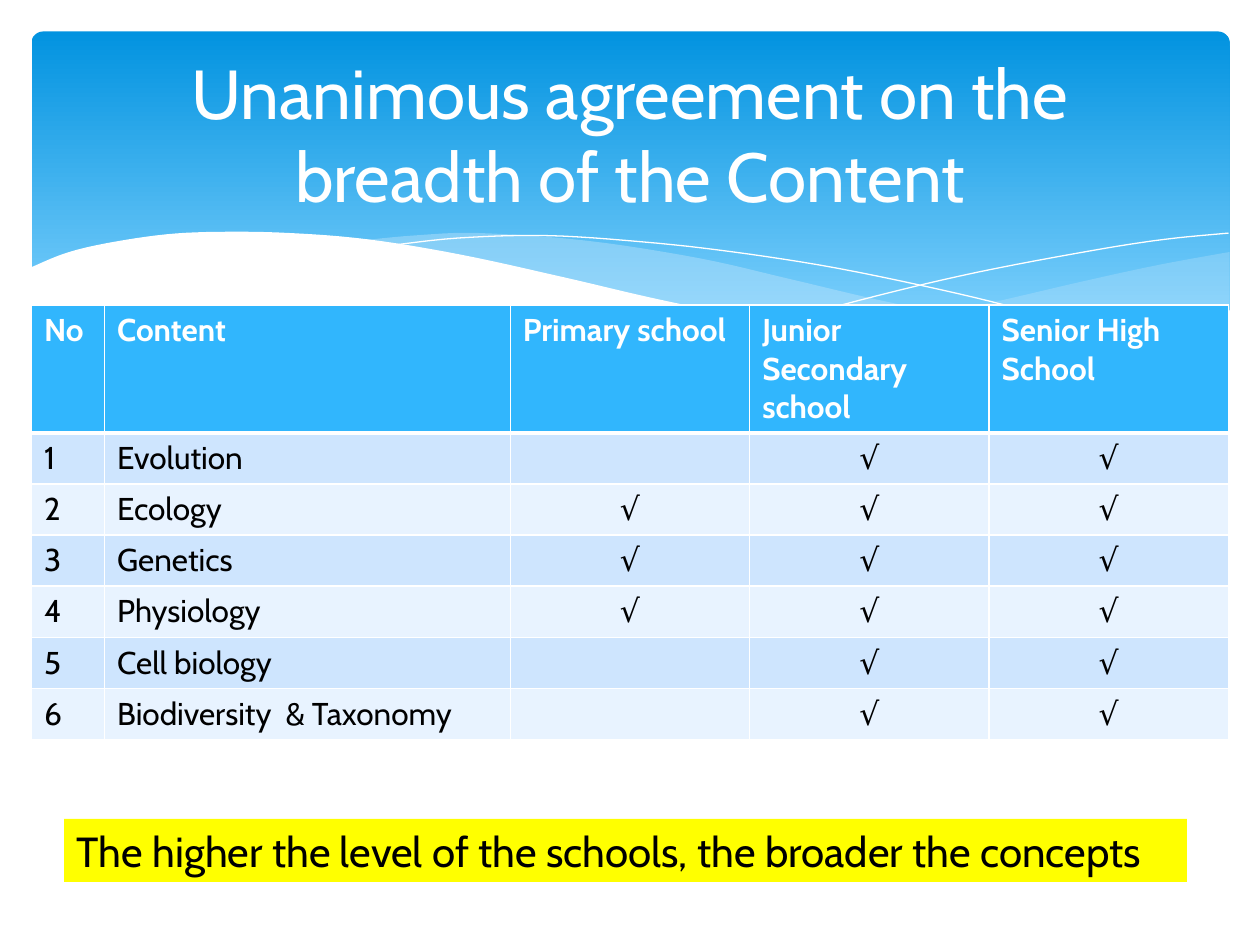
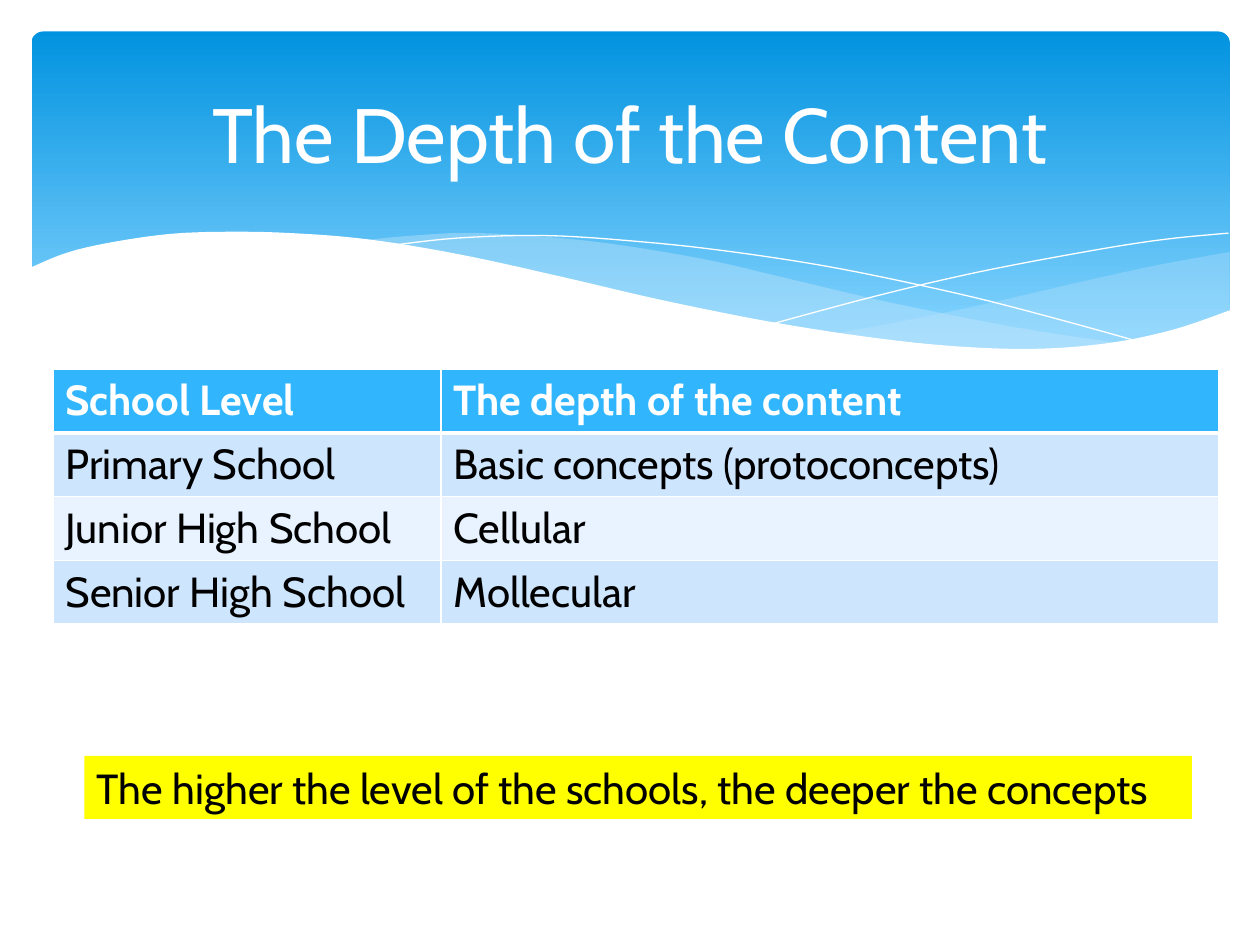
"""Build two slides on the breadth and depth of school biology content."""
from lxml import etree
from pptx import Presentation
from pptx import util as u
from pptx.dml.color import RGBColor
from pptx.enum import shapes, text
from pptx.oxml.ns import qn

PX = 9144
FONT = "Cabin"
WHITE, BLACK, YELLOW = "FFFFFF", "000000", "FFFF00"
BAND_TOP, BAND_BOTTOM, MIST = "0293E0", "83D3FE", "C6E7FC"
HEADER_FILL, ROW_FILLS = "31B6FD", ("CEE5FE", "E8F3FF")

BAND_BOX = (25, 25, 951, 270)
TITLE_BOX = (50, 37, 900, 137)

RIGHT_SWELL = [
    [(951, 175), (896, 185), (836, 198), (754, 217), (681, 232), (636, 240)],
    [(636, 240), (694, 246), (756, 252), (819, 252), (872, 245), (924, 232), (951, 222)],
]
MIDDLE_SWELL = [
    [(868, 248), (782, 235), (681, 215), (604, 197), (530, 180), (440, 166),
     (355, 160), (303, 162), (261, 166)],
    [(261, 166), (337, 178), (424, 197), (541, 223), (625, 239), (697, 249),
     (771, 253), (823, 252), (868, 248)],
]
FALLING_LINE = [
    [(284, 170), (338, 164), (408, 162), (485, 167), (557, 175), (640, 188),
     (735, 208), (806, 226), (882, 247)],
]
RISING_LINE = [[(588, 232), (670, 210), (751, 191), (841, 174), (899, 165), (950, 160)]]
WHITE_WAVE = [
    [(952, 221), (905, 237), (850, 248), (784, 252), (701, 247), (601, 233),
     (504, 214), (422, 195), (340, 177), (267, 165), (205, 160), (152, 159),
     (107, 161), (60, 168), (27, 176), (-2, 188)],
    [(-2, 304), (952, 304)],
]

CHECK = "√"
BREADTH_ROWS = [
    ["No", "Content", "Primary school", "Junior Secondary school", "Senior High School"],
    ["1", "Evolution", "", CHECK, CHECK],
    ["2", "Ecology", CHECK, CHECK, CHECK],
    ["3", "Genetics", CHECK, CHECK, CHECK],
    ["4", "Physiology", CHECK, CHECK, CHECK],
    ["5", "Cell biology", "", CHECK, CHECK],
    ["6", "Biodiversity  & Taxonomy", "", CHECK, CHECK],
]
DEPTH_ROWS = [
    ["School Level", "The depth of the content"],
    ["Primary School", "Basic concepts (protoconcepts)"],
    ["Junior High School", "Cellular"],
    ["Senior High School", "Mollecular"],
]


def color(hex_code):
    """Turn a hex string into a colour."""
    return RGBColor.from_string(hex_code)


def emu(box):
    """Turn lengths in px into EMU."""
    return [u.Emu(length * PX) for length in box]


def format_text(paragraph, size, hex_code, bold=False, align=text.PP_ALIGN.LEFT):
    """Set the alignment of a paragraph and the font of its runs."""
    paragraph.alignment = align
    for run in paragraph.runs:
        run.font.name = FONT
        run.font.size = u.Pt(size)
        run.font.bold = bold
        run.font.color.rgb = color(hex_code)


def smooth_curve(anchors, steps=6):
    """Return points of a Catmull-Rom curve through the anchors."""
    padded = [anchors[0], *anchors, anchors[-1]]
    points = [anchors[0]]
    for a, b, c, d in zip(padded, padded[1:], padded[2:], padded[3:]):
        for step in range(1, steps + 1):
            t = step / steps
            points.append(tuple(
                (2 * q + (r - p) * t + (2 * p - 5 * q + 4 * r - s) * t ** 2
                 + (3 * q - p - 3 * r + s) * t ** 3) / 2
                for p, q, r, s in zip(a, b, c, d)))
    return points


def add_wave(slide, box, edges, fill=None, opacity=100):
    """Draw a filled wave, or a white hairline when no fill is given."""
    points = [(x * PX, y * PX) for edge in edges for x, y in smooth_curve(edge)]
    builder = slide.shapes.build_freeform(*points[0])
    builder.add_line_segments(points[1:], close=fill is not None)
    wave = builder.convert_to_shape(*emu(box[:2]))
    wave.shadow.inherit = False
    if fill is None:
        wave.fill.background()
        wave.line.color.rgb = color(WHITE)
        wave.line.width = u.Pt(0)
        return
    wave.line.fill.background()
    wave.fill.solid()
    wave.fill.fore_color.rgb = color(fill)
    if opacity < 100:
        tint = wave.element.spPr.find(qn("a:solidFill"))[0]
        etree.SubElement(tint, qn("a:alpha"), val=str(opacity * 1000))


def add_band(slide, box):
    """Draw the blue band with its waves."""
    band = slide.shapes.add_shape(shapes.MSO_SHAPE.ROUNDED_RECTANGLE, *emu(box))
    band.adjustments[0] = 0.034
    band.shadow.inherit = False
    band.line.fill.background()
    band.fill.gradient()
    band.fill.gradient_angle = 270
    stops = zip(band.fill.gradient_stops, (0, 0.9), (BAND_TOP, BAND_BOTTOM))
    for stop, position, hex_code in stops:
        stop.position = position
        stop.color.rgb = color(hex_code)
    add_wave(slide, box, RIGHT_SWELL, MIST, 29)
    add_wave(slide, box, MIDDLE_SWELL, MIST, 40)
    add_wave(slide, box, FALLING_LINE)
    add_wave(slide, box, RISING_LINE)
    add_wave(slide, box, WHITE_WAVE, WHITE)


def place_title(slide, box, wording, size):
    """Place the title placeholder in front of the band."""
    title = slide.shapes.title
    title.left, title.top, title.width, title.height = emu(box)
    title.element.getparent().append(title.element)
    frame = title.text_frame
    frame.text = wording
    frame.word_wrap = True
    frame.auto_size = text.MSO_AUTO_SIZE.NONE
    frame.vertical_anchor = text.MSO_ANCHOR.MIDDLE
    format_text(frame.paragraphs[0], size, WHITE, align=text.PP_ALIGN.CENTER)


def add_borders(cell, bottom_width):
    """Give a cell white borders."""
    properties = cell._tc.get_or_add_tcPr()
    for side, width in (("L", 1), ("R", 1), ("T", 1), ("B", bottom_width)):
        line = etree.SubElement(properties, qn(f"a:ln{side}"), w=str(u.Pt(width)))
        fill = etree.SubElement(line, qn("a:solidFill"))
        etree.SubElement(fill, qn("a:srgbClr"), val=WHITE)


def add_content_table(slide, box, rows, column_widths, row_heights, size):
    """Add a table with a blue header and banded rows."""
    frame = slide.shapes.add_table(len(rows), len(column_widths), *emu(box))
    table = frame.table
    table.horz_banding = False
    for column, width in zip(table.columns, emu(column_widths)):
        column.width = width
    for row, height in zip(table.rows, emu(row_heights)):
        row.height = height
    for row_number, values in enumerate(rows):
        header = row_number == 0
        fill = HEADER_FILL if header else ROW_FILLS[(row_number - 1) % 2]
        for column_number, value in enumerate(values):
            cell = table.cell(row_number, column_number)
            add_borders(cell, 3 if header else 1)
            cell.fill.solid()
            cell.fill.fore_color.rgb = color(fill)
            cell.text = value
            align = text.PP_ALIGN.CENTER if value == CHECK else text.PP_ALIGN.LEFT
            format_text(cell.text_frame.paragraphs[0], size,
                        WHITE if header else BLACK, header, align)


def add_conclusion(slide, box, wording):
    """Add the yellow conclusion box."""
    conclusion = slide.shapes.add_textbox(*emu(box))
    conclusion.fill.solid()
    conclusion.fill.fore_color.rgb = color(YELLOW)
    frame = conclusion.text_frame
    frame.text = wording
    frame.word_wrap = False
    frame.auto_size = text.MSO_AUTO_SIZE.SHAPE_TO_FIT_TEXT
    format_text(frame.paragraphs[0], 24, BLACK)


def add_titled_slide(presentation, wording, size):
    """Add a slide with the band and its title."""
    slide = presentation.slides.add_slide(presentation.slide_layouts[5])
    add_band(slide, BAND_BOX)
    place_title(slide, TITLE_BOX, wording, size)
    return slide


def add_breadth_slide(presentation):
    """Add the slide on the breadth of the content."""
    slide = add_titled_slide(
        presentation, "Unanimous agreement on the breadth of the Content", 39.6)
    add_content_table(slide, (25, 242, 950, 340), BREADTH_ROWS,
                      [58, 322] + [190] * 3, [100] + [40] * 6, 18)
    add_conclusion(slide, (51, 650, 891, 50),
                   "The higher the level of the schools, the broader the concepts")


def add_depth_slide(presentation):
    """Add the slide on the depth of the content."""
    slide = add_titled_slide(presentation, "The Depth of the Content", 44)
    add_content_table(slide, (42, 293, 925, 200), DEPTH_ROWS, [308, 617], [50] * 4, 24)
    add_conclusion(slide, (67, 600, 879, 50),
                   "The higher the level of the schools, the deeper the concepts")


def main():
    """Build and save the presentation."""
    presentation = Presentation()
    presentation.slide_width, presentation.slide_height = emu((1000, 750))
    add_breadth_slide(presentation)
    add_depth_slide(presentation)
    presentation.save("out.pptx")


if __name__ == "__main__":
    main()
